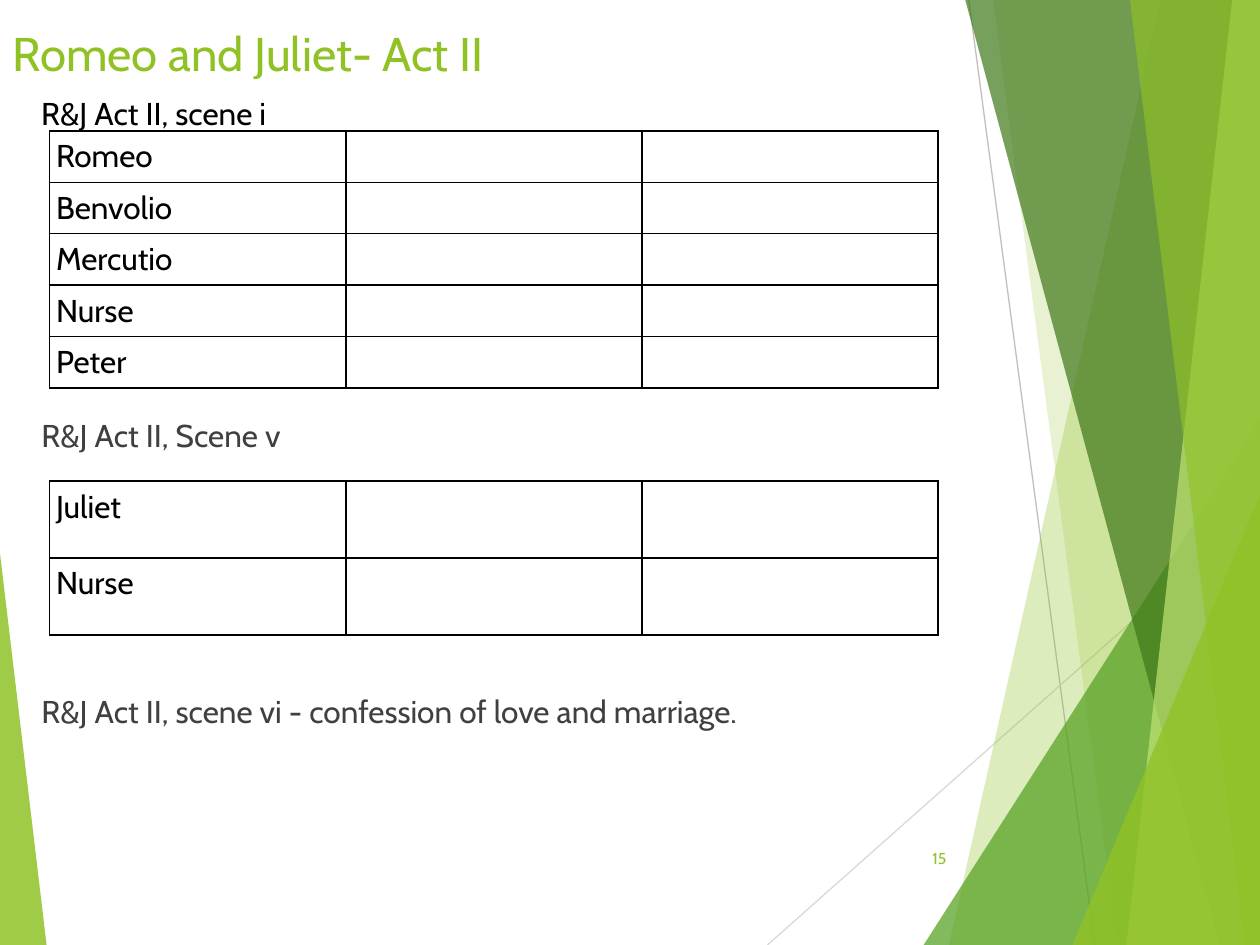
from lxml import etree
from pptx import Presentation
from pptx.dml.color import RGBColor
from pptx.enum.shapes import MSO_CONNECTOR, MSO_SHAPE
from pptx.enum.text import MSO_ANCHOR, MSO_AUTO_SIZE, PP_ALIGN
from pptx.oxml.ns import qn
from pptx.util import Cm, Pt

STRAIGHT = MSO_CONNECTOR.STRAIGHT
TRIANGLE = MSO_SHAPE.ISOSCELES_TRIANGLE
TOP, MIDDLE = MSO_ANCHOR.TOP, MSO_ANCHOR.MIDDLE
LEFT, RIGHT = PP_ALIGN.LEFT, PP_ALIGN.RIGHT
NO_FIT = MSO_AUTO_SIZE.NONE

FONT = "Cabin"
GREEN, BLACK, GREY = "90C226", "000000", "404040"
WIDTH, HEIGHT = 25.4, 19.05
COLUMN_WIDTH = 5.97
CELL_MARGIN = 0.13


def color(code):
    return RGBColor.from_string(code)


def write(para, text, size=18, fill=BLACK, align=LEFT, before=0):
    para.alignment = align
    para.space_before = Pt(before)
    span = para.add_run()
    span.text = text
    span.font.name = FONT
    span.font.size = Pt(size)
    span.font.color.rgb = color(fill)


def place(box, left, top, width, height, anchor=TOP):
    box.left, box.top = Cm(left), Cm(top)
    box.width, box.height = Cm(width), Cm(height)
    frame = box.text_frame
    frame.word_wrap = True
    frame.auto_size = NO_FIT
    frame.vertical_anchor = anchor
    return frame


def add_text(page, text, left, top, width, height, anchor=TOP, **style):
    box = page.shapes.add_textbox(0, 0, 0, 0)
    frame = place(box, left, top, width, height, anchor)
    write(frame.paragraphs[0], text, **style)


def remove_bullet(para):
    properties = para._p.get_or_add_pPr()
    properties.set("marL", "0")
    properties.set("indent", "0")
    etree.SubElement(properties, qn("a:buNone"))


def add_line(page, start, end, stroke):
    line = page.shapes.add_connector(
        STRAIGHT, Cm(start[0]), Cm(start[1]), Cm(end[0]), Cm(end[1]))
    line.line.color.rgb = color(stroke)
    line.line.width = Pt(0.75)
    etree.SubElement(line._element.spPr, qn("a:effectLst"))


def paint(shape, fill, opacity):
    shape.shadow.inherit = False
    shape.line.fill.background()
    shape.fill.solid()
    shape.fill.fore_color.rgb = color(fill)
    tint = shape._element.spPr.find(qn("a:solidFill"))[0]
    etree.SubElement(tint, qn("a:alpha"), val=str(opacity * 1000))


def add_ribbon(page, top_x, bottom_x, fill, opacity):
    """Full-height panel from a slanted left edge to the right of the page."""
    builder = page.shapes.build_freeform(Cm(top_x), 0)
    corners = [(WIDTH, 0), (WIDTH, HEIGHT), (bottom_x, HEIGHT)]
    builder.add_line_segments([(Cm(x), Cm(y)) for x, y in corners], close=True)
    paint(builder.convert_to_shape(), fill, opacity)


def add_wedge(page, left, top, width, tip, fill, opacity):
    """Triangle standing on the bottom edge of the page."""
    wedge = page.shapes.add_shape(
        TRIANGLE, Cm(left), Cm(top), Cm(width), Cm(HEIGHT - top))
    wedge.adjustments[0] = tip
    paint(wedge, fill, opacity)


def add_border(cell):
    properties = cell._tc.get_or_add_tcPr()
    for side in ("a:lnL", "a:lnR", "a:lnT", "a:lnB"):
        edge = etree.SubElement(properties, qn(side), w=str(Pt(1)))
        solid = etree.SubElement(edge, qn("a:solidFill"))
        etree.SubElement(solid, qn("a:srgbClr"), val=BLACK)


def add_cast_table(page, names, top, row_height):
    table = page.shapes.add_table(
        len(names), 3, Cm(1), Cm(top),
        Cm(3 * COLUMN_WIDTH), Cm(len(names) * row_height)).table
    table.first_row = table.horz_banding = False
    for column in table.columns:
        column.width = Cm(COLUMN_WIDTH)
    for row, name in zip(table.rows, names):
        row.height = Cm(row_height)
        for cell in row.cells:
            cell.margin_left = cell.margin_right = Cm(CELL_MARGIN)
            cell.margin_top = cell.margin_bottom = Cm(CELL_MARGIN)
            add_border(cell)
            cell.fill.background()
        write(row.cells[0].text_frame.paragraphs[0], name)


def add_decoration(page):
    add_line(page, (19.53, 0), (22.07, HEIGHT), "BFBFBF")
    add_line(page, (WIDTH, 10.24), (15.47, HEIGHT), "D9D9D9")
    add_ribbon(page, 23.39, 19.13, GREEN, 30)
    add_ribbon(page, 20.02, 22.53, GREEN, 20)
    add_wedge(page, 18.62, 8.46, 6.78, 1, "54A021", 72)
    add_ribbon(page, 19.46, 24.59, "3F7819", 70)
    add_ribbon(page, 24.84, 22.71, "C0E474", 70)
    add_ribbon(page, 22.78, 25.1, GREEN, 65)
    add_wedge(page, 21.62, 9.98, 3.78, 1, GREEN, 80)
    add_wedge(page, 0, 11.15, 0.94, 0, GREEN, 85)


def main():
    deck = Presentation()
    deck.slide_width, deck.slide_height = Cm(WIDTH), Cm(HEIGHT)
    page = deck.slides.add_slide(deck.slide_layouts[1])
    add_decoration(page)

    # Title
    title = place(page.shapes.title, 0, 0.36, 17.91, 1.57)
    write(title.paragraphs[0], "Romeo and Juliet- Act II", size=27, fill=GREEN)

    # Scene headings, spaced to leave room for the second table
    body = place(page.placeholders[1], 0.58, 8.26, 18.72, 10.79)
    first, last = body.paragraphs[0], body.add_paragraph()
    write(first, "R&J Act II, Scene v", fill=GREY)
    write(last, "R&J Act II, scene vi - confession of love and marriage.",
          fill=GREY, before=136)
    for para in (first, last):
        remove_bullet(para)

    # Page number
    add_text(page, "15", 17.91, 16.99, 1.42, 0.61, anchor=MIDDLE,
             size=9, fill=GREEN, align=RIGHT)

    # Cast of each scene
    add_cast_table(page, ["Romeo", "Benvolio", "Mercutio", "Nurse", "Peter"],
                   2.64, 1.03)
    add_cast_table(page, ["Juliet", "Nurse"], 9.7, 1.55)
    add_text(page, "R&J Act II, scene i", 0.58, 1.78, 10.01, 1.02)

    deck.save("out.pptx")


if __name__ == "__main__":
    main()
